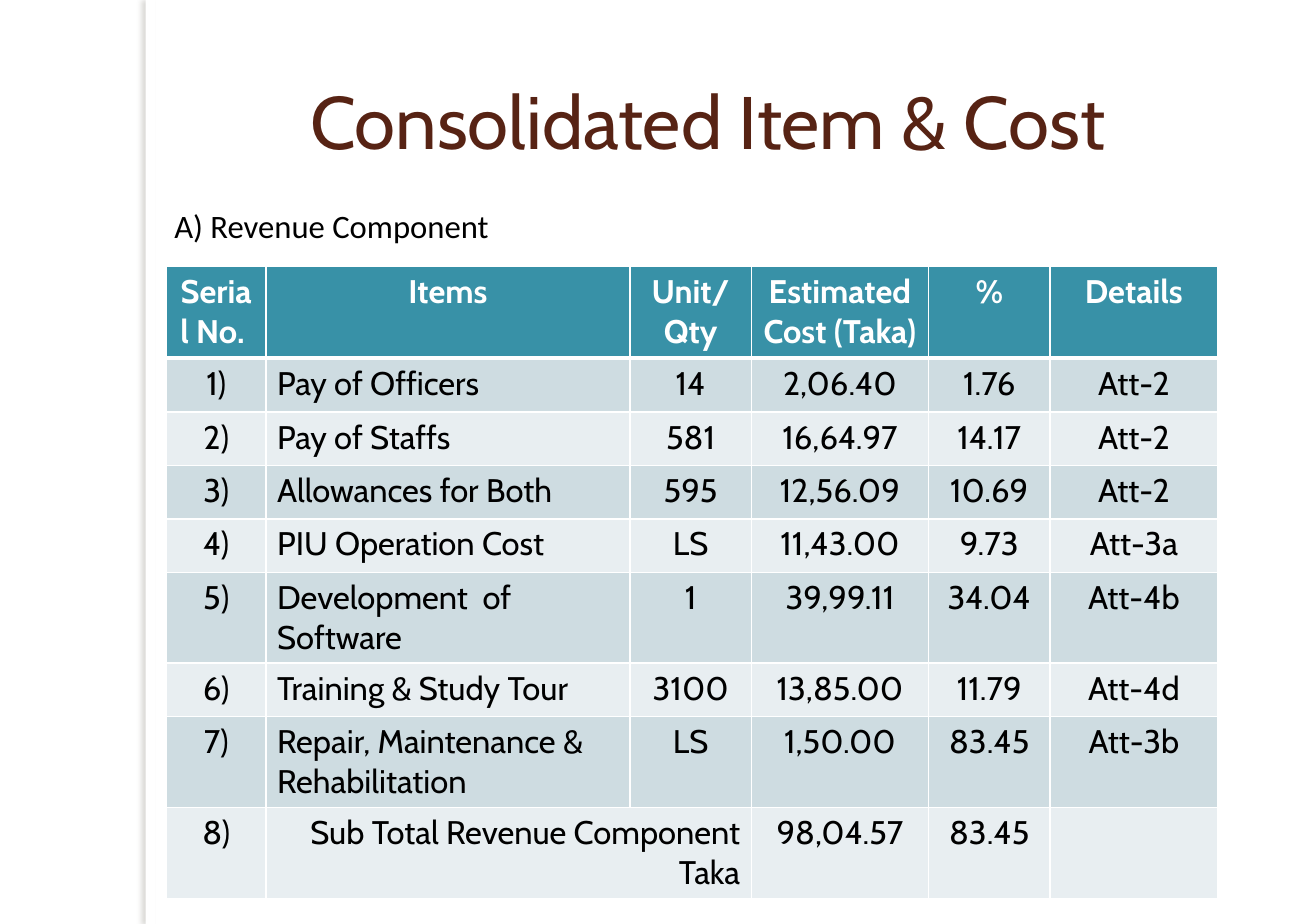
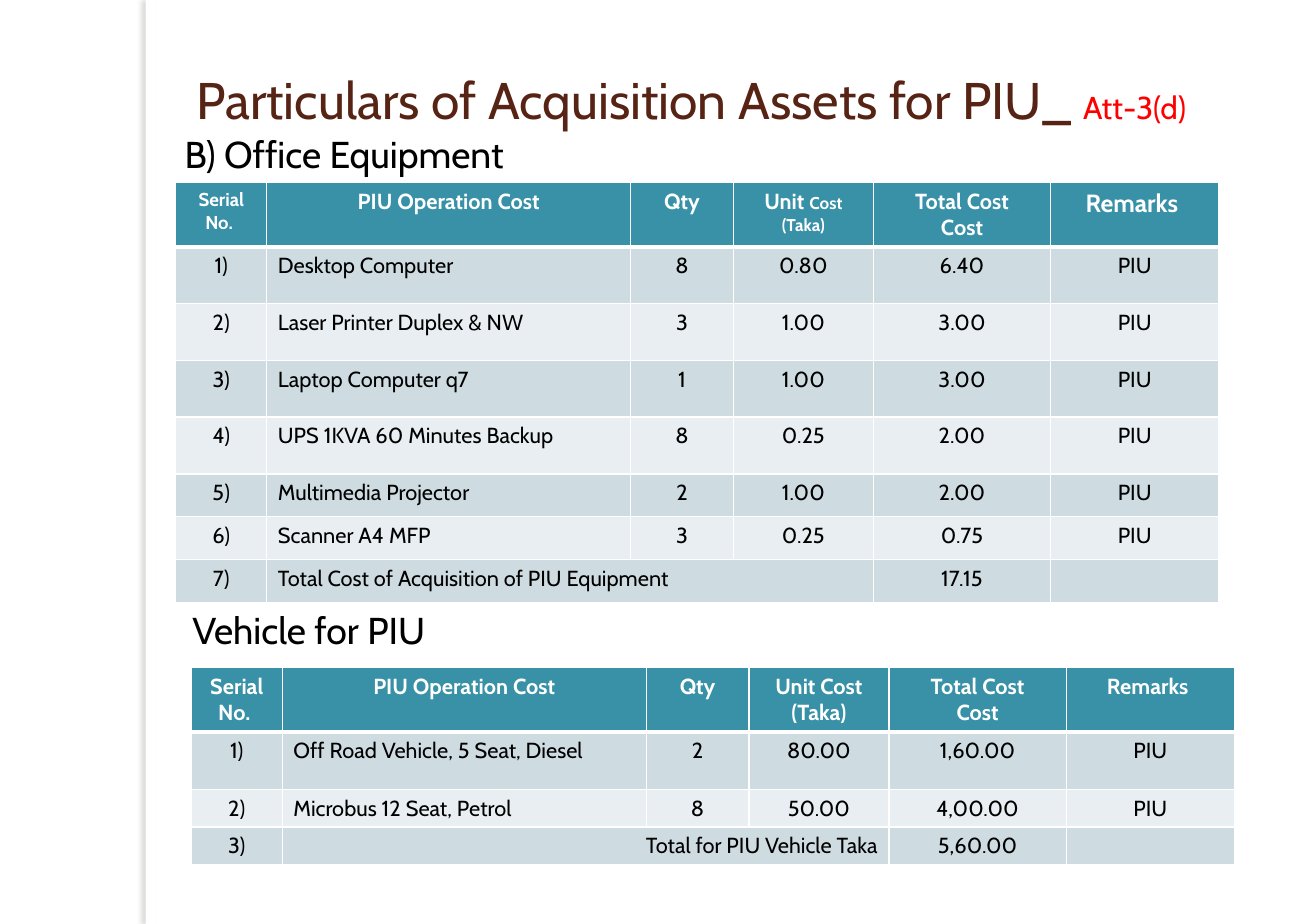
"""Build two slides of project cost tables."""
from lxml.etree import SubElement
from pptx import Presentation
from pptx.dml.color import RGBColor
from pptx.enum.shapes import MSO_SHAPE
from pptx.enum.text import MSO_ANCHOR, MSO_AUTO_SIZE, PP_ALIGN
from pptx.oxml.ns import qn
from pptx.util import Pt

HUES = {
    "white": "FFFFFF", "black": "000000", "title": "572314", "red": "FF0000",
    "head": "3891A7", "odd": "CEDCE1", "even": "E8EEF1", "shade": "736F63",
}
LEFT, MID, RIGHT = PP_ALIGN.LEFT, PP_ALIGN.CENTER, PP_ALIGN.RIGHT
FONT = "Cabin"
BAND = (93.6, 0, 6.5, 594)
ASSET_COLS = [58.5, 234, 66, 90, 114, 108]

COSTS = {
    "at": (107, 171.4), "size": 21, "total": RIGHT,
    "cols": [64, 234, 78, 114, 78, 108],
    "rows": [59] + [34.4] * 8,
    "head": ["Serial No. ", "Items", "Unit/\nQty", "Estimated Cost (Taka)", "%", "Details"],
    "body": [
        ["Pay of Officers", "14", "2,06.40", "1.76", "Att-2"],
        ["Pay of Staffs", "581", "16,64.97", "14.17", "Att-2"],
        ["Allowances for Both", "595", "12,56.09", "10.69", "Att-2"],
        ["PIU Operation Cost", "LS", "11,43.00", "9.73", "Att-3a"],
        ["Development  of Software", "1", "39,99.11", "34.04", "Att-4b"],
        ["Training & Study Tour", "3100", "13,85.00", "11.79", "Att-4d"],
        ["Repair, Maintenance & Rehabilitation", "LS", "1,50.00", "83.45", "Att-3b"],
        ["Sub Total Revenue Component Taka", None, "98,04.57", "83.45", ""],
    ],
}
OFFICE = {
    "at": (113, 117.4), "size": 14, "total": LEFT,
    "cols": ASSET_COLS,
    "rows": [37.5] + [36.5] * 4 + [27.6] * 3,
    "head": [
        [("Serial No. ", {"size": 12})], "PIU Operation Cost", "Qty",
        [("Unit ", {}), ("Cost (Taka)", {"size": 11})],
        "Total Cost\nCost", [("Remarks ", {"size": 16})],
    ],
    "body": [
        ["Desktop Computer", "8", "0.80", "6.40", "PIU"],
        ["Laser Printer Duplex & NW", "3", "1.00", "3.00", "PIU"],
        ["Laptop Computer q7", "1", "1.00", "3.00", "PIU"],
        ["UPS 1KVA 60 Minutes Backup", "8", "0.25", "2.00", "PIU"],
        ["Multimedia Projector", "2", "1.00", "2.00", "PIU"],
        ["Scanner A4 MFP", "3", "0.25", "0.75", "PIU"],
        ["Total Cost of Acquisition of PIU Equipment", None, None, "17.15", ""],
    ],
}
CARS = {
    "at": (123, 429), "size": 14, "total": RIGHT,
    "cols": ASSET_COLS,
    "rows": [41.8, 36.7, 24, 24],
    "head": ["Serial No. ", "PIU Operation Cost", "Qty", "Unit Cost (Taka)",
             "Total Cost\nCost", "Remarks "],
    "body": [
        ["Off Road Vehicle, 5 Seat, Diesel", "2", "80.00", "1,60.00", "PIU"],
        ["Microbus 12 Seat, Petrol", "8", "50.00", "4,00.00", "PIU"],
        ["Total for PIU Vehicle Taka", None, None, "5,60.00", ""],
    ],
}
SLIDES = [
    {
        "box": (123, 40.4, 664, 73.5), "size": 47.8,
        "title": "Consolidated Item & Cost",
        "tables": [COSTS],
        "notes": [("A) Revenue Component", (105, 129, 234, 32.5),
                   {"size": 21, "name": "Calibri"})],
    },
    {
        "box": (96.5, 39.7, 696, 48.2), "size": 33.1,
        "title": [("Particulars of Acquisition Assets for PIU_ ", {}),
                  ("Att-3(d)", {"size": 20.3, "color": "red"})],
        "tables": [OFFICE, CARS],
        "notes": [("B) Office Equipment", (111.6, 80.6, 246, 36), {"size": 24}),
                  ("Vehicle for PIU", (116.6, 387, 246, 36), {"size": 24})],
    },
]


def style(font, form):
    for key, val in form.items():
        if key == "color":
            font.color.rgb = RGBColor.from_string(HUES[val])
        else:
            setattr(font, key, Pt(val) if key == "size" else val)


def write(frame, text, align, form):
    """Fill a frame with lines of text or with one line of styled parts."""
    form = {"name": FONT, "bold": False, **form}
    lines = [[(line, {})] for line in text.split("\n")] if isinstance(text, str) else [text]
    for num, line in enumerate(lines):
        para = frame.add_paragraph() if num else frame.paragraphs[0]
        para.alignment = align
        for part, extra in line:
            if part:
                run = para.add_run()
                run.text = part
                style(run.font, {**form, **extra})
            else:
                end = SubElement(para._p, qn("a:endParaRPr"))
                end.set("sz", str(int(form["size"] * 100)))


def paint(shape, hue):
    shape.fill.solid()
    shape.fill.fore_color.rgb = RGBColor.from_string(HUES[hue])


def tint(node, hue):
    return SubElement(node, qn("a:srgbClr"), val=HUES[hue])


def edge(cell, base):
    prop = cell._tc.get_or_add_tcPr()
    for side, wide in (("L", 1), ("R", 1), ("T", 1), ("B", base)):
        line = SubElement(prop, qn("a:ln" + side), w=str(Pt(wide)))
        tint(SubElement(line, qn("a:solidFill")), "white")


def add_band(slide, layout):
    """Draw the shaded band and hand it to the shared layout."""
    band = slide.shapes.add_shape(MSO_SHAPE.RECTANGLE, *map(Pt, BAND))
    paint(band, "white")
    band.line.fill.background()
    band.shadow.inherit = False
    glow = SubElement(band._element.spPr.find(qn("a:effectLst")), qn("a:outerShdw"),
                      blurRad=str(Pt(3)), dist=str(Pt(3)), dir="10800000",
                      algn="ctr", rotWithShape="0")
    SubElement(tint(glow, "shade"), qn("a:alpha"), val="25000")
    layout.shapes._spTree.insert(2, band._element)


def add_grid(slide, data):
    cols, highs, size = data["cols"], data["rows"], data["size"]
    rows = [data["head"]] + [[f"{n})"] + row for n, row in enumerate(data["body"], 1)]
    area = (*data["at"], sum(cols), sum(highs))
    grid = slide.shapes.add_table(len(rows), len(cols), *map(Pt, area)).table
    grid.first_row = grid.horz_banding = False
    for col, wide in zip(grid.columns, cols):
        col.width = Pt(wide)
    for r, (row, high) in enumerate(zip(rows, highs)):
        grid.rows[r].height = Pt(high)
        top, last = r == 0, r == len(rows) - 1
        hue = "head" if top else "odd" if r % 2 else "even"
        form = {"size": size, "bold": top, "color": "white" if top else "black"}
        for c, text in enumerate(row):
            cell = grid.cell(r, c)
            edge(cell, 3 if top else 1)
            paint(cell, hue)
            align = MID if top or c != 1 else data["total"] if last else LEFT
            write(cell.text_frame, text or "", align, form)
        if None in row:
            grid.cell(r, 1).merge(grid.cell(r, 1 + row.count(None)))


def add_title(slide, data):
    title = slide.shapes.title
    for key, val in zip(("left", "top", "width", "height"), data["box"]):
        setattr(title, key, Pt(val))
    frame = title.text_frame
    frame.auto_size, frame.vertical_anchor = MSO_AUTO_SIZE.NONE, MSO_ANCHOR.MIDDLE
    write(frame, data["title"], MID, {"size": data["size"], "color": "title"})


def main():
    deck = Presentation()
    deck.slide_width, deck.slide_height = Pt(846), Pt(594)
    layout = deck.slide_layouts[5]
    for num, data in enumerate(SLIDES):
        slide = deck.slides.add_slide(layout)
        if num == 0:
            add_band(slide, layout)
        add_title(slide, data)
        for table in data["tables"]:
            add_grid(slide, table)
        for text, box, form in data["notes"]:
            frame = slide.shapes.add_textbox(*map(Pt, box)).text_frame
            frame.word_wrap = True
            write(frame, text, LEFT, {"color": "black", **form})
    deck.save("out.pptx")


if __name__ == "__main__":
    main()
